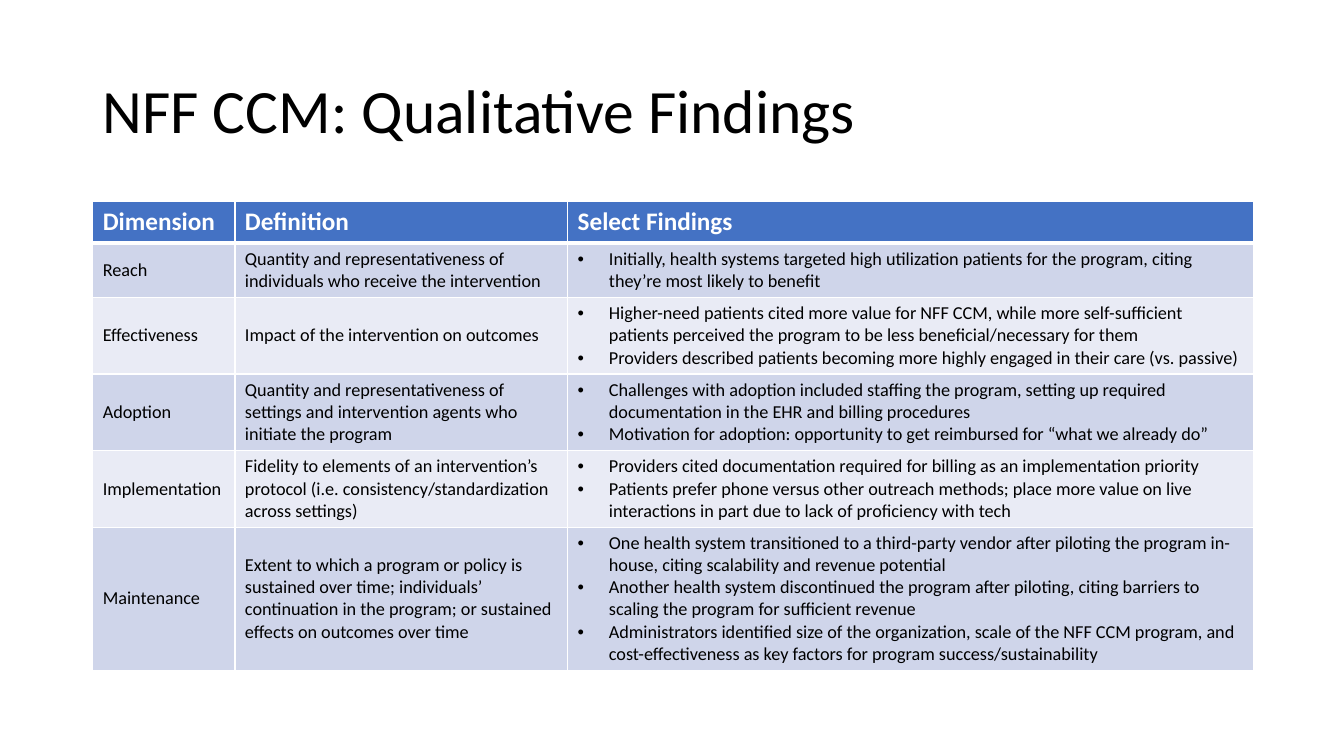
"""Build the slide with the table of qualitative findings by dimension."""
from lxml.etree import SubElement
from pptx import Presentation
from pptx.dml.color import RGBColor
from pptx.enum.text import MSO_ANCHOR
from pptx.oxml.ns import qn
from pptx.util import Inches, Pt

COLORS = {"text": "000000", "white": "FFFFFF", "header": "4472C4",
          "odd": "CFD5EA", "even": "E9EBF5"}
FONT = "Calibri"
LEFT, WIDTH = 0.92, 11.5
TITLE_TOP, TITLE_HEIGHT = 0.4, 1.45
TABLE_TOP = 2
COLUMN_WIDTHS = [1.41, 3.3, 6.8]
HEADER_HEIGHT, LINE_HEIGHT, ROW_PADDING = 0.41, 0.22, 0.1
BULLET_INDENT = 0.31

HEADINGS = ["Dimension", "Definition", "Select Findings"]
FINDINGS = [
    (2, "Reach",
     "Quantity and representativeness of individuals who receive the intervention",
     ["Initially, health systems targeted high utilization patients for the program, "
      "citing they’re most likely to benefit"]),
    (3, "Effectiveness",
     "Impact of the intervention on outcomes",
     ["Higher-need patients cited more value for NFF CCM, while more self-sufficient "
      "patients perceived the program to be less beneficial/necessary for them",
      "Providers described patients becoming more highly engaged in their care "
      "(vs. passive)"]),
    (3, "Adoption",
     "Quantity and representativeness of settings and intervention agents who "
     "initiate the program",
     ["Challenges with adoption included staffing the program, setting up required "
      "documentation in the EHR and billing procedures",
      "Motivation for adoption: opportunity to get reimbursed for “what we already do”"]),
    (3, "Implementation",
     "Fidelity to elements of an intervention’s protocol (i.e. "
     "consistency/standardization across settings)",
     ["Providers cited documentation required for billing as an implementation priority",
      "Patients prefer phone versus other outreach methods; place more value on live "
      "interactions in part due to lack of proficiency with tech"]),
    (6, "Maintenance",
     "Extent to which a program or policy is sustained over time; individuals’ "
     "continuation in the program; or sustained effects on outcomes over time",
     ["One health system transitioned to a third-party vendor after piloting the "
      "program in-house, citing scalability and revenue potential",
      "Another health system discontinued the program after piloting, citing barriers "
      "to scaling the program for sufficient revenue",
      "Administrators identified size of the organization, scale of the NFF CCM program, "
      "and cost-effectiveness as key factors for program success/sustainability"]),
]


def add_bullet(paragraph):
    """Give a paragraph a round bullet with a hanging indent."""
    properties = paragraph._p.get_or_add_pPr()
    properties.set("marL", str(Inches(BULLET_INDENT)))
    properties.set("indent", str(-Inches(BULLET_INDENT)))
    SubElement(properties, qn("a:buFont"), typeface="Arial")
    SubElement(properties, qn("a:buChar"), char="•")


def write_text(text_frame, texts, size=13, color="text", bold=False,
               bullets=False, line_spacing=None):
    """Write one formatted paragraph for each text."""
    text_frame.word_wrap = True
    for index, text in enumerate(texts):
        paragraph = text_frame.add_paragraph() if index else text_frame.paragraphs[0]
        if line_spacing:
            paragraph.line_spacing = line_spacing
        if bullets:
            add_bullet(paragraph)
        run = paragraph.add_run()
        run.text = text
        run.font.name = FONT
        run.font.size = Pt(size)
        run.font.bold = bold
        run.font.color.rgb = RGBColor.from_string(COLORS[color])


def set_borders(cell, **widths):
    """Draw white borders, with a width in points for each side."""
    properties = cell._tc.get_or_add_tcPr()
    for side in "LRTB":
        line = SubElement(properties, qn(f"a:ln{side}"), w=str(Pt(widths.get(side, 1))))
        fill = SubElement(line, qn("a:solidFill"))
        SubElement(fill, qn("a:srgbClr"), val=COLORS["white"])


def fill_cell(cell, texts, fill, anchor=MSO_ANCHOR.MIDDLE, borders=None, **text_format):
    """Set the borders, fill and text of a table cell."""
    set_borders(cell, **(borders or {}))
    cell.fill.solid()
    cell.fill.fore_color.rgb = RGBColor.from_string(COLORS[fill])
    cell.vertical_anchor = anchor
    write_text(cell.text_frame, texts, **text_format)


def add_title(slide, text):
    """Add the slide title."""
    box = slide.shapes.add_textbox(Inches(LEFT), Inches(TITLE_TOP),
                                   Inches(WIDTH), Inches(TITLE_HEIGHT))
    box.text_frame.vertical_anchor = MSO_ANCHOR.MIDDLE
    write_text(box.text_frame, [text], size=44, line_spacing=0.9)


def add_findings_table(slide):
    """Add the table with one row for each dimension."""
    heights = [HEADER_HEIGHT] + [lines * LINE_HEIGHT + ROW_PADDING
                                 for lines, *_ in FINDINGS]
    table = slide.shapes.add_table(len(heights), len(HEADINGS), Inches(LEFT),
                                   Inches(TABLE_TOP), Inches(WIDTH),
                                   Inches(sum(heights))).table
    for column, width in zip(table.columns, COLUMN_WIDTHS):
        column.width = Inches(width)
    for row, height in zip(table.rows, heights):
        row.height = Inches(height)
    for column, heading in enumerate(HEADINGS):
        fill_cell(table.cell(0, column), [heading], "header", anchor=MSO_ANCHOR.TOP,
                  borders={"B": 3}, size=18, color="white", bold=True)
    for row, (_, dimension, definition, findings) in enumerate(FINDINGS, start=1):
        fill = "odd" if row % 2 else "even"
        borders = {"T": 3} if row == 1 else None
        for column, texts in enumerate([[dimension], [definition], findings]):
            fill_cell(table.cell(row, column), texts, fill, borders=borders,
                      bullets=column == 2)


def main():
    """Build and save the presentation."""
    presentation = Presentation()
    presentation.slide_width = Inches(13.33)
    presentation.slide_height = Inches(7.5)
    slide = presentation.slides.add_slide(presentation.slide_layouts[6])
    add_title(slide, "NFF CCM: Qualitative Findings")
    add_findings_table(slide)
    presentation.save("out.pptx")


if __name__ == "__main__":
    main()
